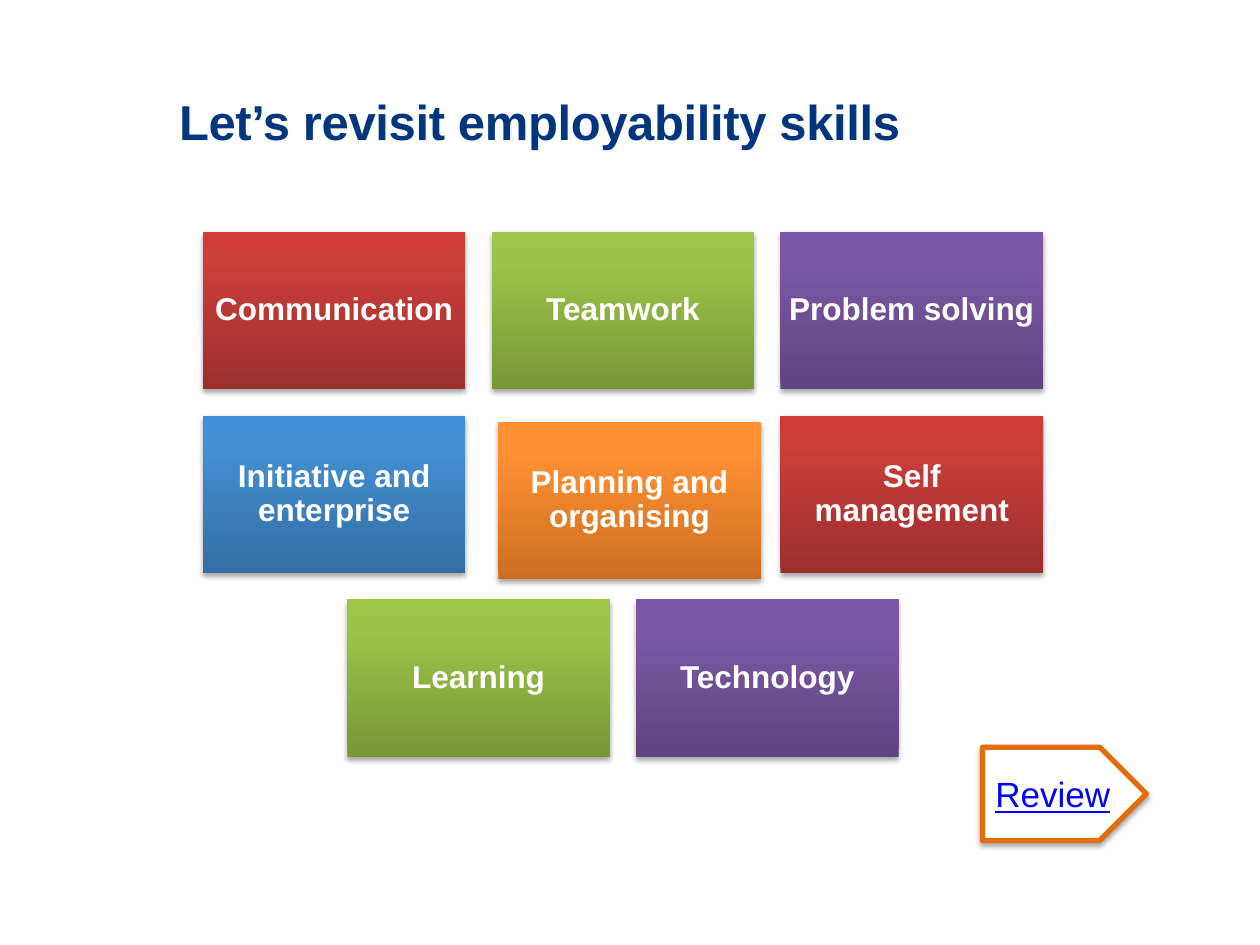
import pptx
import pptx.util
import pptx.dml.color
import pptx.enum.shapes
import pptx.enum.text
import pptx.oxml
import pptx.oxml.ns

Pt = pptx.util.Pt
ALIGN = pptx.enum.text.PP_ALIGN
ANCHOR = pptx.enum.text.MSO_ANCHOR
SHAPES = pptx.enum.shapes.MSO_SHAPE

RED = ("9C2F2D", "CB3E3A", "CE3B37")
GREEN = ("779737", "9BC348", "9DC746")
PURPLE = ("5F4480", "7B58A6", "7C57A8")
BLUE = ("336EA3", "438FD3", "4090D7")
ORANGE = ("CC6E20", "FF9034", "FF9136")
STOPS = (0, 80, 100)

SKILL_ROWS = [
    [("Communication", RED), ("Teamwork", GREEN), ("Problem solving", PURPLE)],
    [("Initiative and enterprise", BLUE), ("Planning and organising", ORANGE),
     ("Self management", RED)],
    [("Learning", GREEN), ("Technology", PURPLE)],
]
NUDGES = {"Planning and organising": (3.8, 3.6)}

TITLE_FONT = {"name": "Arial", "size": Pt(28), "bold": True}
SKILL_FONT = {"name": "Arial", "size": Pt(18), "bold": True}
REVIEW_FONT = {"name": "Arial", "size": Pt(20), "underline": True}
TITLE_FRAME = {"margin_left": 0, "margin_right": 0, "margin_top": 0,
               "margin_bottom": 0, "vertical_anchor": ANCHOR.BOTTOM}
SKILL_FRAME = {"margin_left": Pt(5), "margin_right": Pt(5), "margin_top": Pt(5),
               "margin_bottom": Pt(5), "vertical_anchor": ANCHOR.MIDDLE}
REVIEW_FRAME = {"vertical_anchor": ANCHOR.MIDDLE}


def rgb(hex_colour):
    """Turn a hex string into a colour."""
    return pptx.dml.color.RGBColor.from_string(hex_colour)


def set_all(target, values):
    """Set each attribute named in a dict."""
    for name, value in values.items():
        setattr(target, name, value)


def write_text(shape, wording, frame_format, font_format, colour, alignment, spacing):
    """Write one formatted paragraph into a shape and return its run."""
    frame = shape.text_frame
    set_all(frame, {"word_wrap": True, "auto_size": pptx.enum.text.MSO_AUTO_SIZE.NONE})
    set_all(frame, frame_format)
    paragraph = frame.paragraphs[0]
    set_all(paragraph, {"alignment": alignment, "line_spacing": spacing})
    run = paragraph.add_run()
    run.text = wording
    set_all(run.font, font_format)
    run.font.color.rgb = rgb(colour)
    return run


def add_shadow(shape):
    """Give a shape a soft shadow just below it."""
    shape.shadow.inherit = False
    effects = shape._element.spPr.find(pptx.oxml.ns.qn("a:effectLst"))
    effects.append(pptx.oxml.parse_xml(
        f'<a:outerShdw {pptx.oxml.ns.nsdecls("a")} blurRad="{Pt(3.1)}" '
        f'dist="{Pt(1.8)}" dir="5400000" rotWithShape="0">'
        '<a:srgbClr val="000000"><a:alpha val="35000"/></a:srgbClr></a:outerShdw>'))


def fill_gradient(shape, colours):
    """Fill a shape with a gradient that rises from its bottom edge."""
    shape.fill.gradient()
    shape.fill.gradient_angle = 90
    stops = next(shape._element.spPr.iter(pptx.oxml.ns.qn("a:gsLst")))
    for stop in list(stops):
        stops.remove(stop)
    for position, colour in zip(STOPS, colours):
        stops.append(pptx.oxml.parse_xml(
            f'<a:gs {pptx.oxml.ns.nsdecls("a")} pos="{position * 1000}">'
            f'<a:srgbClr val="{colour}"/></a:gs>'))


def place_title(slide, left, top, width, height):
    """Place and format the slide title."""
    title = slide.shapes.title
    set_all(title, {"left": Pt(left), "top": Pt(top),
                    "width": Pt(width), "height": Pt(height)})
    run = write_text(title, "Let’s revisit employability skills", TITLE_FRAME,
                     TITLE_FONT, "00367D", ALIGN.LEFT, 0.8)
    run.font._element.set("spc", "-20")


def place_skills(slide, left, top, width, height, gap=15):
    """Place the skill tiles in centred rows within the box."""
    tile_width = (width - 2 * gap) / 3
    tile_height = (height - 2 * gap) / 3
    for row, skills in enumerate(SKILL_ROWS):
        row_width = len(skills) * (tile_width + gap) - gap
        row_left = left + (width - row_width) / 2
        for column, (skill, colours) in enumerate(skills):
            shift_x, shift_y = NUDGES.get(skill, (0, 0))
            tile = slide.shapes.add_shape(
                SHAPES.RECTANGLE,
                Pt(row_left + column * (tile_width + gap) + shift_x),
                Pt(top + row * (tile_height + gap) + shift_y),
                Pt(tile_width), Pt(tile_height))
            fill_gradient(tile, colours)
            tile.line.fill.background()
            add_shadow(tile)
            write_text(tile, skill, SKILL_FRAME, SKILL_FONT, "FFFFFF",
                       ALIGN.CENTER, 0.9)


def place_review(slide, left, top, width, height):
    """Place the review arrow."""
    review = slide.shapes.add_shape(SHAPES.PENTAGON, Pt(left), Pt(top),
                                    Pt(width), Pt(height))
    review.fill.solid()
    review.fill.fore_color.rgb = rgb("FFFFFF")
    review.line.color.rgb = rgb("E46C0A")
    review.line.width = Pt(3)
    add_shadow(review)
    write_text(review, "Review", REVIEW_FRAME, REVIEW_FONT, "0000FF",
               ALIGN.CENTER, 1.0)


def main():
    """Build the slide and save it."""
    deck = pptx.Presentation()
    set_all(deck, {"slide_width": Pt(720), "slide_height": Pt(540)})
    slide = deck.slides.add_slide(deck.slide_layouts[5])
    place_title(slide, 102.3, 31.7, 553, 54)
    place_skills(slide, 116, 132.5, 480, 300)
    place_review(slide, 561.5, 427, 93.6, 53.3)
    deck.save("out.pptx")


if __name__ == "__main__":
    main()
